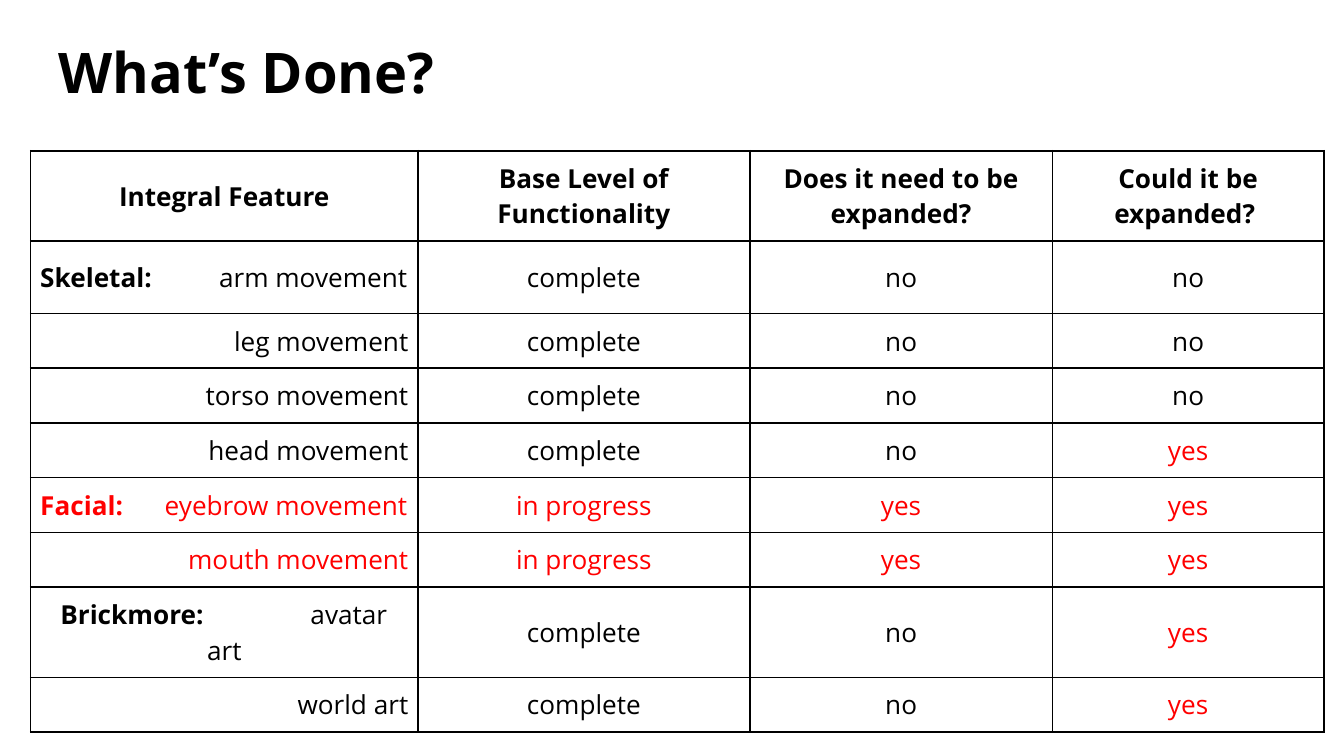
import lxml.etree
import pptx
import pptx.dml.color
import pptx.enum.text
import pptx.oxml.ns
import pptx.util

Cm = pptx.util.Cm
Pt = pptx.util.Pt
ALIGN = pptx.enum.text.PP_ALIGN
ANCHOR = pptx.enum.text.MSO_ANCHOR
qn = pptx.oxml.ns.qn

FONT = "Open Sans"
COLORS = {"ink": "000000", "todo": "FF0000", "paper": "FFFFFF"}
PAD = 0.18  # cell margin, cm
WIDE = 0.56  # side margin of the cell with the wrapped feature, cm
COLS = [7.32, 6.27, 5.72, 5.13]
ROWS = [1.52, 1.37] + [0.97] * 7

HEADS = ["Integral Feature", "Base Level of Functionality",
         "Does it need to be expanded?", "Could it be expanded? "]
# group, feature, second line, base level, needs expanding, could expand
ITEMS = [
    ("Skeletal:", "arm movement", "", "complete", "no", "no"),
    ("", "leg movement", "", "complete", "no", "no"),
    ("", "torso movement", "", "complete", "no", "no"),
    ("", "head movement", "", "complete", "no", "yes"),
    ("Facial:", "eyebrow movement", "", "in progress", "yes", "yes"),
    ("", "mouth movement", "", "in progress", "yes", "yes"),
    ("Brickmore:", "avatar", "art", "complete", "no", "yes"),
    ("", "world art", "", "complete", "no", "yes"),
]


def rgb(name):
    return pptx.dml.color.RGBColor.from_string(COLORS[name])


def add_run(para, text, size=14, bold=False, color="ink"):
    run = para.add_run()
    run.text = text
    run.font.name = FONT
    run.font.size = Pt(size)
    run.font.bold = bold
    run.font.color.rgb = rgb(color)


def add_tab(para, stop):
    """Give the paragraph one right-aligned tab stop."""
    tabs = lxml.etree.SubElement(para._p.get_or_add_pPr(), qn("a:tabLst"))
    lxml.etree.SubElement(tabs, qn("a:tab"), pos=str(stop), algn="r")


def add_lines(cell):
    """Draw a thin line on every side of the cell."""
    props = cell._tc.get_or_add_tcPr()
    for side in ("lnL", "lnR", "lnT", "lnB"):
        line = lxml.etree.SubElement(props, qn("a:" + side), w=str(Pt(1)))
        fill = lxml.etree.SubElement(line, qn("a:solidFill"))
        lxml.etree.SubElement(fill, qn("a:srgbClr"), val=COLORS["ink"])


def style_cell(cell):
    add_lines(cell)
    cell.fill.solid()
    cell.fill.fore_color.rgb = rgb("paper")
    cell.vertical_anchor = ANCHOR.MIDDLE
    cell.margin_left = cell.margin_right = Cm(PAD)
    cell.margin_top = cell.margin_bottom = Cm(PAD)


def fill_cell(cell, text, align=ALIGN.CENTER, **look):
    para = cell.text_frame.paragraphs[0]
    para.alignment = align
    add_run(para, text, **look)


def fill_group(cell, group, name, rest, color):
    """Group name on the left, feature on the right, any rest below."""
    side = WIDE if rest else PAD
    cell.margin_left = cell.margin_right = Cm(side)
    para = cell.text_frame.paragraphs[0]
    para.alignment = ALIGN.LEFT
    add_tab(para, Cm(COLS[0] - 2 * side - 0.02))
    add_run(para, group, bold=True, color=color)
    add_run(para, "\t" + name, color=color)
    if rest:
        para = cell.text_frame.add_paragraph()
        para.alignment = ALIGN.CENTER
        add_run(para, rest, color=color)


def add_title(slide, text):
    title = slide.shapes.title
    title.left, title.top = Cm(0.86), Cm(0.46)
    title.width, title.height = Cm(23.67), Cm(2.31)
    frame = title.text_frame
    frame.word_wrap = True
    frame.auto_size = pptx.enum.text.MSO_AUTO_SIZE.NONE
    frame.vertical_anchor = ANCHOR.TOP
    frame.margin_left = frame.margin_right = Cm(0.25)
    frame.margin_top = frame.margin_bottom = Cm(0.25)
    para = frame.paragraphs[0]
    para.alignment = ALIGN.LEFT
    para.line_spacing = 1.0
    add_run(para, text, size=30, bold=True)


def add_grid(slide):
    frame = slide.shapes.add_table(len(ROWS), len(COLS), Cm(0.58), Cm(2.85),
                                   Cm(sum(COLS)), Cm(sum(ROWS)))
    table = frame.table
    table.first_row = table.horz_banding = False
    for col, width in zip(table.columns, COLS):
        col.width = Cm(width)
    for row, height in zip(table.rows, ROWS):
        row.height = Cm(height)
    for cell in table.iter_cells():
        style_cell(cell)

    # Header row
    for col, head in enumerate(HEADS):
        fill_cell(table.cell(0, col), head, bold=True)

    # Feature rows: work still to do is red
    for row, (group, name, rest, *marks) in enumerate(ITEMS, 1):
        color = "todo" if marks[0] == "in progress" else "ink"
        first = table.cell(row, 0)
        if group:
            fill_group(first, group, name, rest, color)
        else:
            fill_cell(first, name, ALIGN.RIGHT, color=color)
        for col, mark in enumerate(marks, 1):
            tone = "todo" if mark in ("yes", "in progress") else "ink"
            fill_cell(table.cell(row, col), mark, color=tone)


def main():
    deck = pptx.Presentation()
    deck.slide_width, deck.slide_height = Cm(25.4), Cm(14.29)
    slide = deck.slides.add_slide(deck.slide_layouts[5])
    add_title(slide, "What’s Done?")
    add_grid(slide)
    deck.save("out.pptx")


if __name__ == "__main__":
    main()
